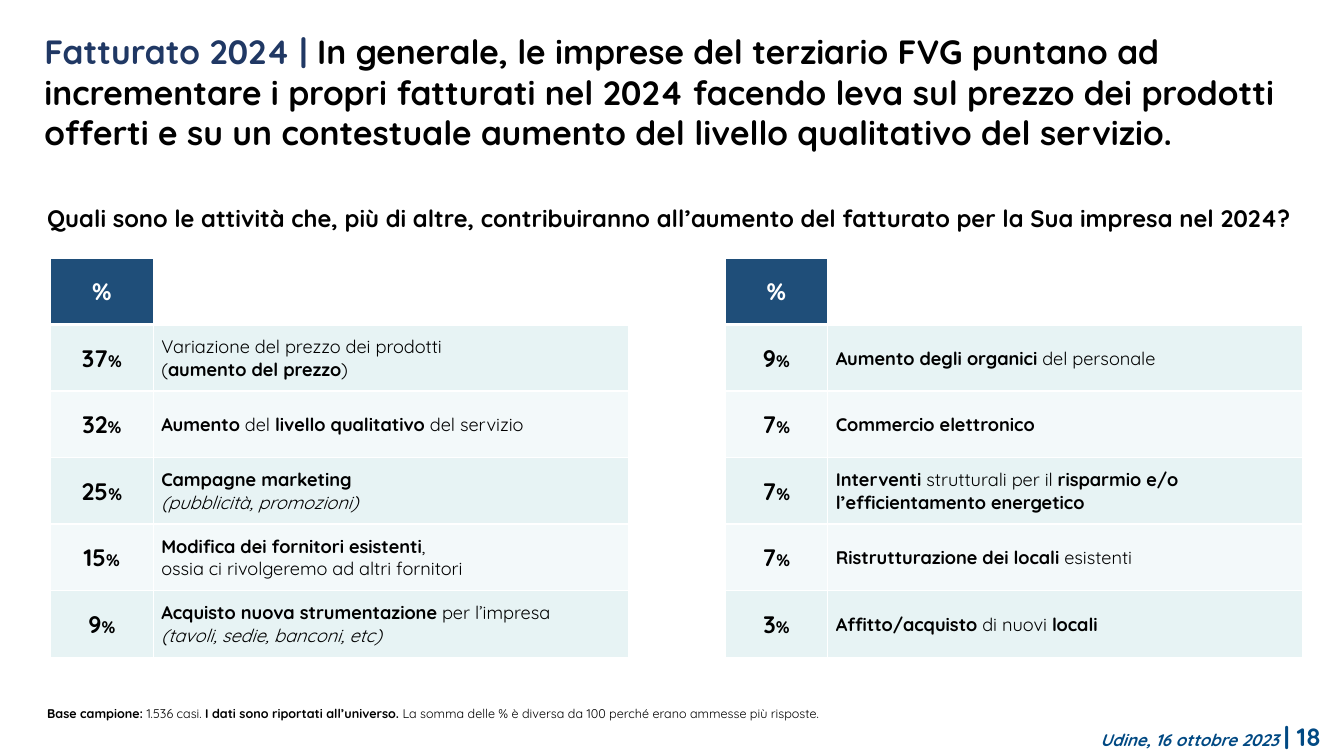
from pptx import Presentation
from pptx.dml.color import RGBColor
from pptx.enum.text import MSO_ANCHOR as Anchor, PP_ALIGN as Align
from pptx.oxml.ns import qn
from pptx.util import Inches, Pt
from lxml.etree import SubElement

FONT = "Quicksand"
BLACK, WHITE, NAVY, INDIGO, BLUE = "000000", "FFFFFF", "1F4E79", "203864", "014983"
BANDS = ("E7F3F4", "F3F9FA")
PLAIN, BOLD, ITALIC = "", "b", "i"

MARGIN = 0.37
TABLE_TOP, TABLE_WIDTH, ROW_HEIGHT = 2.56, 5.73, 0.66
PERCENT_WIDTH = 1.02
TABLE_LEFTS = (0.5, 7.19)

TABLES = (
    (
        (37, [("Variazione del prezzo dei prodotti \n(", PLAIN),
              ("aumento del prezzo", BOLD), (")", PLAIN)]),
        (32, [("Aumento", BOLD), (" del ", PLAIN),
              ("livello qualitativo ", BOLD), ("del servizio", PLAIN)]),
        (25, [("Campagne marketing \n", BOLD), ("(pubblicità, promozioni)", ITALIC)]),
        (15, [("Modifica dei fornitori esistenti", BOLD),
              (", \nossia ci rivolgeremo ad altri fornitori", PLAIN)]),
        (9, [("Acquisto nuova strumentazione ", BOLD), ("per l’impresa \n", PLAIN),
             ("(tavoli, sedie, banconi, etc)", ITALIC)]),
    ),
    (
        (9, [("Aumento degli organici ", BOLD), ("del personale", PLAIN)]),
        (7, [("Commercio elettronico", BOLD)]),
        (7, [("Interventi", BOLD), (" strutturali per il ", PLAIN),
             ("risparmio e/o l’efficientamento energetico", BOLD)]),
        (7, [("Ristrutturazione dei locali ", BOLD), ("esistenti", PLAIN)]),
        (3, [("Affitto/acquisto ", BOLD), ("di nuovi ", PLAIN), ("locali", BOLD)]),
    ),
)


def paint(target, color):
    """Give a font or fill a solid hex colour."""
    if hasattr(target, "solid"):
        target.solid()
        target.fore_color.rgb = RGBColor.from_string(color)
    else:
        target.color.rgb = RGBColor.from_string(color)


def set_font(font, size, color=BLACK, bold=None):
    """Apply the deck typeface with a size, colour and weight."""
    font.name, font.size, font.bold = FONT, Pt(size), bold
    paint(font, color)


def add_span(para, text, size, color=BLACK, style=BOLD):
    """Append styled text, turning newlines into line breaks."""
    for index, piece in enumerate(text.split("\n")):
        if index:
            para.add_line_break()
        if piece:
            span = para.add_run()
            span.text = piece
            set_font(span.font, size, color, BOLD in style)
            span.font.italic = ITALIC in style


def add_box(page, left, top, width, height):
    """Add a wrapping text box and return its first paragraph."""
    frame = page.shapes.add_textbox(*map(Inches, (left, top, width, height))).text_frame
    frame.word_wrap = True
    return frame.paragraphs[0]


def add_title(page, left, top, width, height):
    """Place the two-colour headline in the title placeholder."""
    title = page.shapes.title
    title.left, title.top, title.width, title.height = map(Inches, (left, top, width, height))
    frame = title.text_frame
    frame.word_wrap, frame.vertical_anchor = True, Anchor.TOP
    frame.margin_left = frame.margin_right = Inches(0.07)
    frame.margin_top = frame.margin_bottom = Inches(0.04)
    para = frame.paragraphs[0]
    para.alignment = Align.LEFT
    add_span(para, "Fatturato 2024 | ", 24, INDIGO)
    add_span(para, "In generale, le imprese del terziario FVG puntano ad incrementare "
                   "i propri fatturati nel 2024 facendo leva sul prezzo dei prodotti offerti "
                   "e su un contestuale aumento del livello qualitativo del servizio.", 24)


def add_question(page, left, top, width, height):
    """Place the survey question above the tables."""
    para = add_box(page, left, top, width, height)
    para.line_spacing = 1.1
    para.text = ("Quali sono le attività che, più di altre, contribuiranno "
                 "all’aumento del fatturato per la Sua impresa nel 2024?")
    set_font(para.font, 17, bold=True)


def add_note(page, left, top, width, height):
    """Place the sample note below the tables."""
    para = add_box(page, left, top, width, height)
    para.alignment, para.line_spacing = Align.JUSTIFY, 1.1
    add_span(para, "Base campione: ", 9)
    add_span(para, "1.536 casi. ", 9, style=PLAIN)
    add_span(para, "I dati sono riportati all’universo. ", 9)
    add_span(para, "La somma delle % è diversa da 100 perché erano ammesse più risposte.",
             9, style=PLAIN)


def add_footer(page, left, top, width, height):
    """Place the date and page number at the bottom right."""
    para = add_box(page, left, top, width, height)
    para.alignment = Align.RIGHT
    add_span(para, "Udine, 16 ottobre 2023 ", 12, BLUE, BOLD + ITALIC)
    add_span(para, "| 18", 18, BLUE)


def format_cell(cell, fill, bottom=1, inset=0.01):
    """Set a cell's fill, margins and white borders; return its paragraph."""
    cell.vertical_anchor = Anchor.MIDDLE
    cell.margin_left, cell.margin_right = Inches(inset), Inches(0.01)
    cell.margin_top, cell.margin_bottom = Inches(0.01), 0
    props = cell._tc.get_or_add_tcPr()
    for side, width in (("L", 1), ("R", 1), ("T", 1), ("B", bottom)):
        line = SubElement(props, qn(f"a:ln{side}"), w=str(Pt(width)))
        SubElement(SubElement(line, qn("a:solidFill")), qn("a:srgbClr"), val=WHITE)
    if fill:
        paint(cell.fill, fill)
    else:
        cell.fill.background()
    return cell.text_frame.paragraphs[0]


def add_answers(page, left, top, width, row_height, answers):
    """Build one table of percentages and answers."""
    count = len(answers) + 1
    table = page.shapes.add_table(
        count, 2, *map(Inches, (left, top, width, count * row_height))).table
    table.columns[0].width = Inches(PERCENT_WIDTH)
    table.columns[1].width = Inches(width - PERCENT_WIDTH)
    heading = format_cell(table.cell(0, 0), NAVY, bottom=3)
    heading.alignment = Align.CENTER
    add_span(heading, "%", 17, WHITE)
    format_cell(table.cell(0, 1), None, bottom=3)
    for row, (percent, spans) in enumerate(answers, 1):
        fill = BANDS[(row - 1) % 2]
        value = format_cell(table.cell(row, 0), fill)
        value.alignment = Align.CENTER
        add_span(value, str(percent), 17)
        add_span(value, "%", 12)
        label = format_cell(table.cell(row, 1), fill, inset=0.08)
        for text, style in spans:
            add_span(label, text, 13, style=style)


def main():
    """Build and save the deck."""
    deck = Presentation()
    deck.slide_width, deck.slide_height = Inches(13.33), Inches(7.5)
    page = deck.slides.add_slide(deck.slide_layouts[5])
    add_title(page, MARGIN, 0.27, 12.96, 1.29)
    add_question(page, MARGIN, 1.94, 12.71, 0.39)
    for left, answers in zip(TABLE_LEFTS, TABLES):
        add_answers(page, left, TABLE_TOP, TABLE_WIDTH, ROW_HEIGHT, answers)
    add_note(page, MARGIN, 6.94, 9.03, 0.25)
    add_footer(page, 6.27, 7.11, 6.93, 0.4)
    deck.save("out.pptx")


if __name__ == "__main__":
    main()
